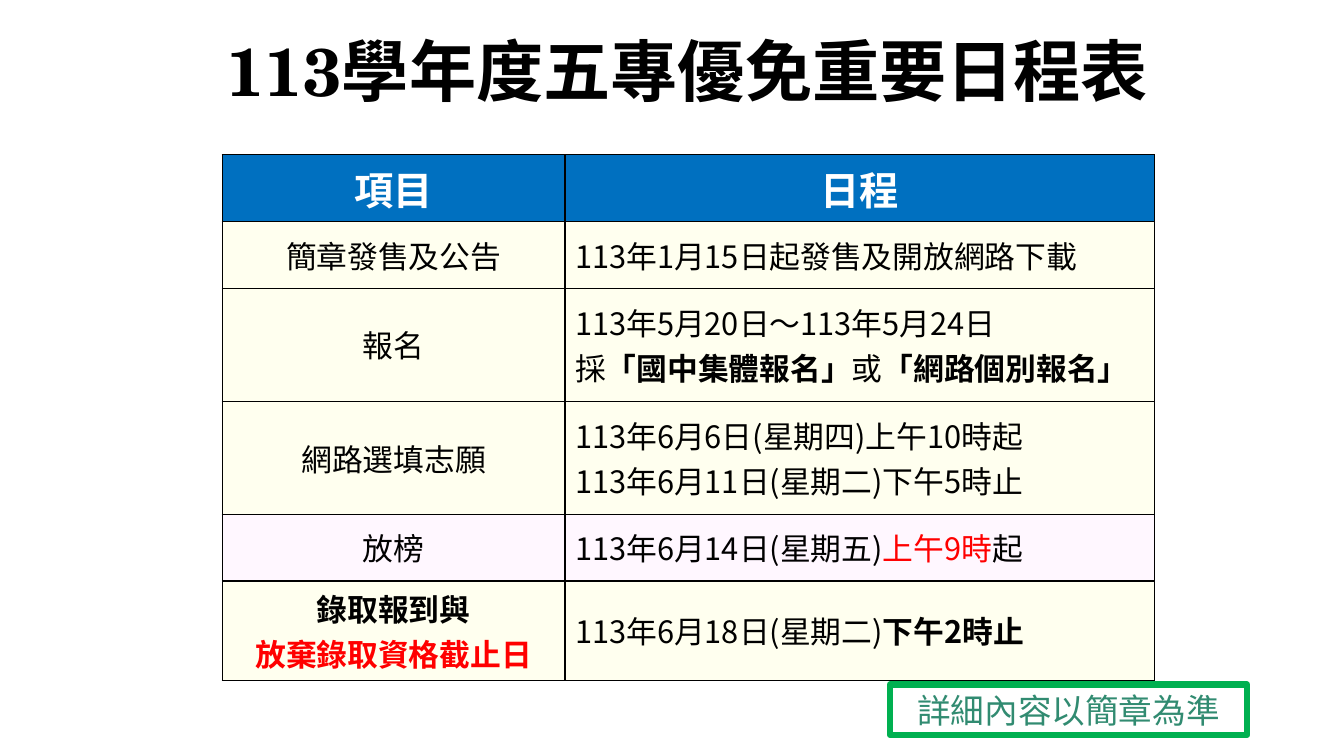
from lxml import etree
from pptx import Presentation
from pptx.dml.color import RGBColor
from pptx.enum.shapes import MSO_SHAPE
from pptx.enum.text import MSO_ANCHOR, PP_ALIGN
from pptx.oxml.ns import qn
from pptx.util import Cm, Pt

CENTER, LEFT = PP_ALIGN.CENTER, PP_ALIGN.LEFT
MIDDLE = MSO_ANCHOR.MIDDLE
RECTANGLE = MSO_SHAPE.RECTANGLE

BLACK = RGBColor(0x00, 0x00, 0x00)
WHITE = RGBColor(0xFF, 0xFF, 0xFF)
RED = RGBColor(0xFF, 0x00, 0x00)
BLUE = RGBColor(0x00, 0x70, 0xC0)
CREAM = RGBColor(0xFF, 0xFF, 0xEF)
LILAC = RGBColor(0xFF, 0xF7, 0xFF)
GREEN = RGBColor(0x00, 0xB0, 0x50)
TEAL = RGBColor(0x31, 0x8B, 0x71)
SANS = "Noto Sans CJK TC"
SERIF = "TeX Gyre Schola"


def add_run(paragraph, text, size, color=BLACK, bold=False, latin=SANS):
    run = paragraph.add_run()
    run.text = text
    run.font.size = Pt(size)
    run.font.bold = bold
    run.font.color.rgb = color
    run.font.name = latin
    east_asian = etree.SubElement(run.font._element, qn("a:ea"))
    east_asian.set("typeface", SANS)


def add_borders(cell):
    properties = cell._tc.get_or_add_tcPr()
    for side in ("a:lnL", "a:lnR", "a:lnT", "a:lnB"):
        line = etree.SubElement(properties, qn(side), w=str(Pt(1)))
        fill = etree.SubElement(line, qn("a:solidFill"))
        etree.SubElement(fill, qn("a:srgbClr"), val=str(BLACK))


presentation = Presentation()
presentation.slide_width = Cm(33.87)
presentation.slide_height = Cm(19.05)
slide = presentation.slides.add_slide(presentation.slide_layouts[6])

# Title
title = slide.shapes.add_textbox(Cm(3.35), Cm(0.61), Cm(27.94), Cm(2.54))
title.text_frame.word_wrap = True
title.text_frame.vertical_anchor = MIDDLE
paragraph = title.text_frame.paragraphs[0]
paragraph.alignment = CENTER
paragraph.line_spacing = 0.9
add_run(paragraph, "113學年度五專優免重要日程表", 48, bold=True, latin=SERIF)

# Schedule: row height in cm, fill, item lines, date lines.
# Each line is a list of runs: text, colour, bold.
schedule = [
    (1.68, BLUE, [[("項目", WHITE, True)]], [[("日程", WHITE, True)]]),
    (1.68, CREAM, [[("簡章發售及公告", BLACK, False)]],
     [[("113年1月15日起發售及開放網路下載", BLACK, False)]]),
    (2.85, CREAM, [[("報名", BLACK, False)]],
     [[("113年5月20日～113年5月24日", BLACK, False)],
      [("採", BLACK, False), ("「國中集體報名」", BLACK, True),
       ("或", BLACK, False), ("「網路個別報名」", BLACK, True)]]),
    (2.85, CREAM, [[("網路選填志願", BLACK, False)]],
     [[("113年6月6日(星期四)上午10時起", BLACK, False)],
      [("113年6月11日(星期二)下午5時止", BLACK, False)]]),
    (1.68, LILAC, [[("放榜", BLACK, False)]],
     [[("113年6月14日(星期五)", BLACK, False), ("上午9時", RED, False),
       ("起", BLACK, False)]]),
    (2.5, CREAM, [[("錄取報到與", BLACK, True)], [("放棄錄取資格截止日", RED, True)]],
     [[("113年6月18日(星期二)", BLACK, False), ("下午2時止", BLACK, True)]]),
]
column_widths = (8.64, 14.86)
table = slide.shapes.add_table(
    len(schedule), len(column_widths), Cm(5.6), Cm(3.9),
    Cm(sum(column_widths)), Cm(sum(row[0] for row in schedule))).table
for column, width in zip(table.columns, column_widths):
    column.width = Cm(width)

for row_index, (height, fill_color, *cell_texts) in enumerate(schedule):
    table.rows[row_index].height = Cm(height)
    is_header = row_index == 0
    for column_index, lines in enumerate(cell_texts):
        cell = table.cell(row_index, column_index)
        add_borders(cell)
        cell.fill.solid()
        cell.fill.fore_color.rgb = fill_color
        cell.vertical_anchor = MIDDLE
        text_frame = cell.text_frame
        for line_index, runs in enumerate(lines):
            paragraph = text_frame.add_paragraph() if line_index else text_frame.paragraphs[0]
            paragraph.alignment = CENTER if is_header or column_index == 0 else LEFT
            for text, color, bold in runs:
                add_run(paragraph, text, 28 if is_header else 22, color, bold)

# Note
note = slide.shapes.add_shape(RECTANGLE, Cm(22.43), Cm(17.25), Cm(9), Cm(1.27))
note.shadow.inherit = False
note.fill.solid()
note.fill.fore_color.rgb = WHITE
note.line.color.rgb = GREEN
note.line.width = Pt(4.5)
note.text_frame.word_wrap = True
note.text_frame.vertical_anchor = MIDDLE
paragraph = note.text_frame.paragraphs[0]
paragraph.alignment = CENTER
add_run(paragraph, "詳細內容以簡章為準", 24, TEAL)

presentation.save("out.pptx")
